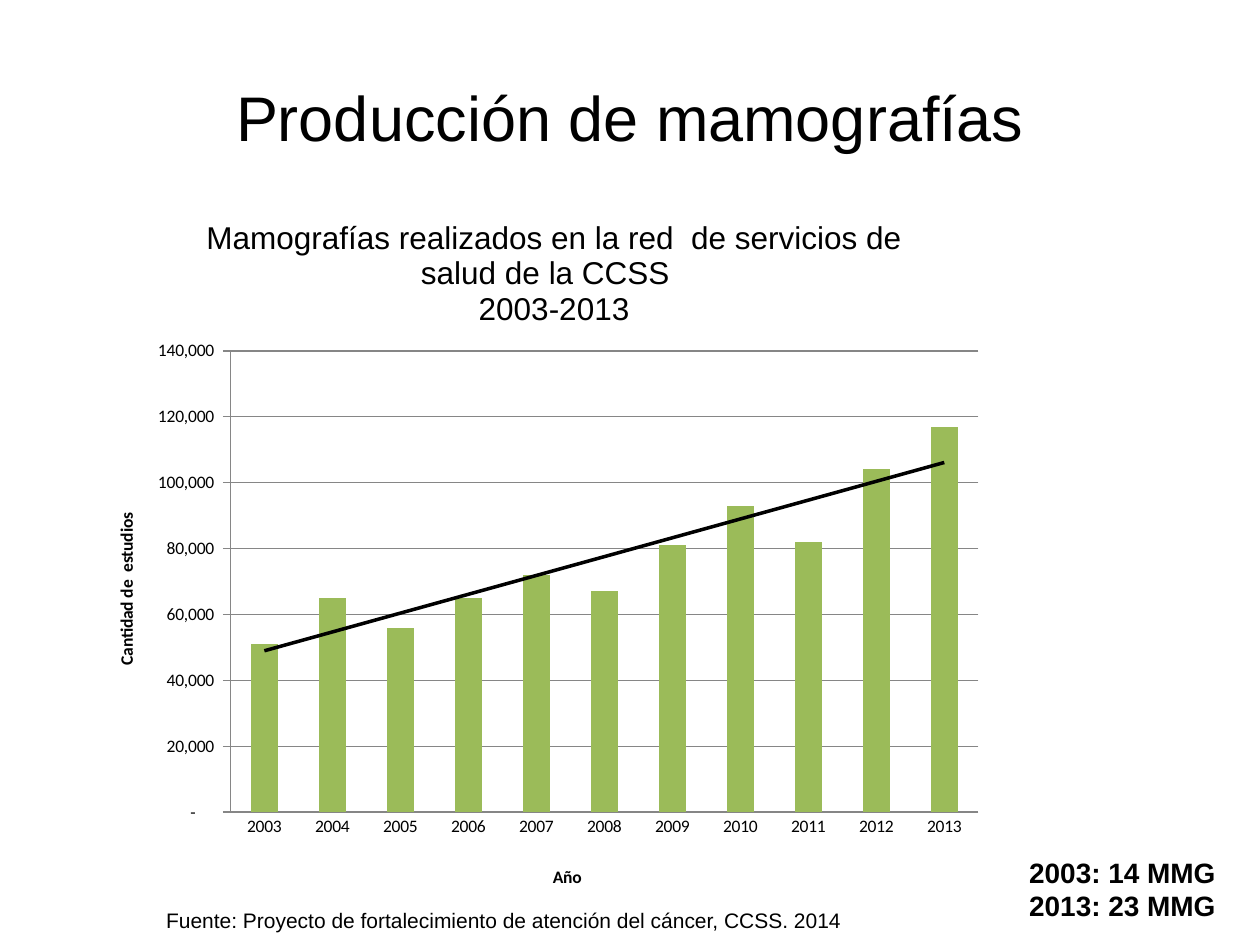
from dataclasses import dataclass
from pptx import Presentation
from pptx.chart.data import CategoryChartData
from pptx.dml.color import RGBColor
from pptx.enum.chart import XL_CHART_TYPE, XL_TICK_MARK
from pptx.enum.text import MSO_ANCHOR, MSO_AUTO_SIZE, PP_ALIGN
from pptx.oxml import parse_xml
from pptx.oxml.ns import nsdecls, qn
from pptx.util import Inches, Pt


@dataclass(frozen=True)
class Theme:
    ink: RGBColor = RGBColor(0, 0, 0)
    bar: RGBColor = RGBColor(0x9B, 0xBB, 0x59)
    grid: RGBColor = RGBColor(0x86, 0x86, 0x86)
    face: str = "Arial"
    plain: str = "Calibri"
    head: int = 36
    title: int = 18
    count: int = 16
    note: int = 12
    axis: int = 10


THEME = Theme()
COUNTS = [51000, 65000, 56000, 65000, 72000, 67000,
          81000, 93000, 82000, 104000, 117000]
FORMAT = r'_(* #,##0_);_(* \(#,##0\);_(* "-"??_);_('


def style(font, size, bold=False, face=THEME.face):
    font.name, font.size, font.bold = face, Pt(size), bold
    font.color.rgb = THEME.ink


def fill(frame, lines, size, bold=False, face=THEME.face, align=None):
    frame.text = "\n".join(lines)
    for para in frame.paragraphs:
        style(para.font, size, bold, face)
        para.alignment = align


def add_text(slide, box, lines, size, bold=False, align=None, wrap=False):
    frame = slide.shapes.add_textbox(*map(Inches, box)).text_frame
    frame.word_wrap = wrap
    if wrap:
        frame.vertical_anchor = MSO_ANCHOR.MIDDLE
    else:
        frame.auto_size = MSO_AUTO_SIZE.SHAPE_TO_FIT_TEXT
    fill(frame, lines, size, bold, align=align)


def place(node, index, inner=False, **spots):
    for old in node.findall(qn("c:layout")):
        node.remove(old)
    target = '<c:layoutTarget val="inner"/>' if inner else ""
    modes = "".join(f'<c:{key}Mode val="edge"/>' for key in "xy")
    sizes = "".join(f'<c:{key} val="{val}"/>' for key, val in spots.items())
    node.insert(index, parse_xml(
        f'<c:layout {nsdecls("c")}><c:manualLayout>{target}{modes}{sizes}'
        '</c:manualLayout></c:layout>'))


def add_trend(chart):
    cat = chart.element.xpath(".//c:ser/c:cat")[0]
    cat.addprevious(parse_xml(
        f'<c:trendline {nsdecls("c", "a")}><c:spPr><a:ln w="{Pt(2)}">'
        f'<a:solidFill><a:srgbClr val="{THEME.ink}"/></a:solidFill></a:ln>'
        '</c:spPr><c:trendlineType val="linear"/><c:dispRSqr val="0"/>'
        '<c:dispEq val="0"/></c:trendline>'))


def name_axis(axis, label, x, y):
    fill(axis.axis_title.text_frame, [label], THEME.axis, True, THEME.plain)
    place(axis.axis_title.element, 1, x=x, y=y)
    axis.format.line.color.rgb = THEME.grid


def add_graph(slide):
    data = CategoryChartData()
    data.categories = [str(year) for year in range(2003, 2014)]
    data.add_series("Series 1", COUNTS)
    box = map(Inches, (0.67, 1.47, 7.24, 5.72))
    chart = slide.shapes.add_chart(
        XL_CHART_TYPE.COLUMN_CLUSTERED, *box, data).chart
    style(chart.font, THEME.axis, face=THEME.plain)
    chart.has_legend = False
    fill(chart.chart_title.text_frame,
         [" Mamografías realizados en la red  de servicios de salud de la CCSS ",
          " 2003-2013"], THEME.title, align=PP_ALIGN.CENTER)
    place(chart.chart_title.element, 1, x=0.12, y=0.04)

    plot = chart.plots[0]
    plot.gap_width = 150
    plot.vary_by_categories = False
    paint = plot.series[0].format.fill
    paint.solid()
    paint.fore_color.rgb = THEME.bar
    add_trend(chart)

    years, scale = chart.category_axis, chart.value_axis
    years.major_tick_mark = XL_TICK_MARK.NONE
    name_axis(years, "Año", 0.51, 0.94)
    scale.minimum_scale, scale.maximum_scale = 0, 140000
    scale.major_unit = 20000
    scale.major_tick_mark = XL_TICK_MARK.OUTSIDE
    scale.major_gridlines.format.line.color.rgb = THEME.grid
    scale.tick_labels.number_format = FORMAT
    scale.tick_labels.number_format_is_linked = False
    name_axis(scale, "Cantidad de  estudios", 0.03, 0.45)
    area = chart.element.xpath(".//c:plotArea")[0]
    place(area, 0, inner=True, x=0.16, y=0.23, w=0.82, h=0.64)


def main():
    deck = Presentation()
    deck.slide_width, deck.slide_height = Inches(10), Inches(7.5)
    slide = deck.slides.add_slide(deck.slide_layouts[6])
    add_text(slide, (0.5, 0.3, 9, 1.25), ["Producción de mamografías"],
             THEME.head, align=PP_ALIGN.CENTER, wrap=True)
    add_graph(slide)
    add_text(slide, (8.07, 6.74, 1.7, 0.64),
             ["2003: 14 MMG", "2013: 23 MMG"], THEME.count, bold=True)
    add_text(slide, (1.22, 7.15, 5.6, 0.3),
             ["Fuente: Proyecto de fortalecimiento de atención del cáncer, "
              "CCSS. 2014"], THEME.note)
    deck.save("out.pptx")


if __name__ == "__main__":
    main()
